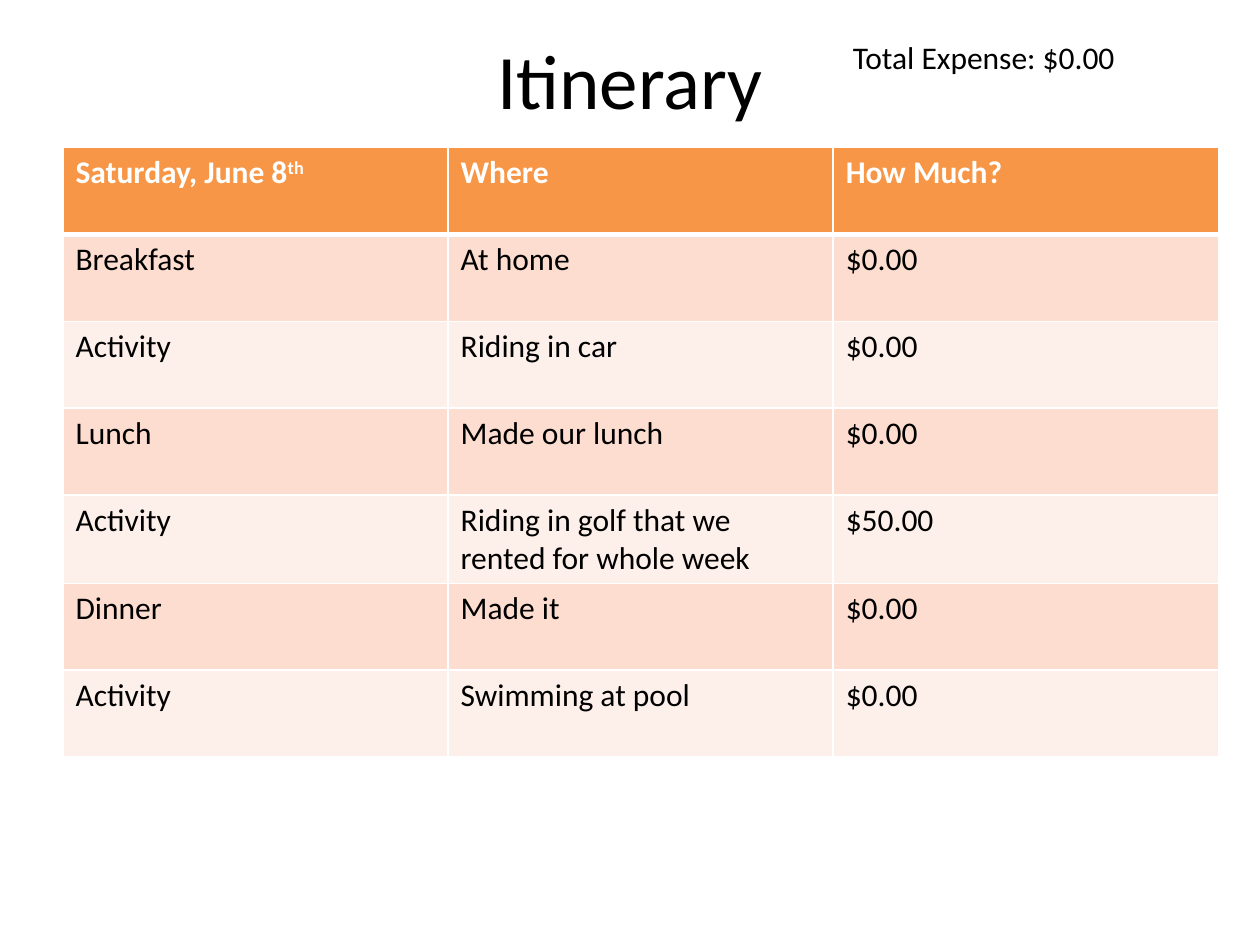
from lxml import etree
from pptx import Presentation
from pptx.dml.color import RGBColor
from pptx.enum.text import MSO_ANCHOR, PP_ALIGN
from pptx.oxml.ns import qn
from pptx.util import Inches, Pt

MIDDLE = MSO_ANCHOR.MIDDLE
TOP = MSO_ANCHOR.TOP
CENTER = PP_ALIGN.CENTER
LEFT = PP_ALIGN.LEFT

COLORS = {
    "ink": "000000",
    "white": "FFFFFF",
    "head": "F79646",
    "odd": "FCDDCF",
    "even": "FDEFE9",
}

TITLE = {"name": "Calibri", "size": Pt(44), "bold": False}
BODY = {"name": "Calibri", "size": Pt(18), "bold": False}
HEAD = {**BODY, "bold": True}

ROWS = [
    ("Saturday, June 8", "Where", "How Much?"),
    ("Breakfast", "At home", "$0.00"),
    ("Activity", "Riding in car", "$0.00"),
    ("Lunch", "Made our lunch", "$0.00"),
    ("Activity", "Riding in golf that we rented for whole week", "$50.00"),
    ("Dinner", "Made it", "$0.00"),
    ("Activity", "Swimming at pool", "$0.00"),
]


def rgb(key):
    return RGBColor.from_string(COLORS[key])


def add_run(para, text, style, color):
    run = para.add_run()
    run.text = text
    for name, value in style.items():
        setattr(run.font, name, value)
    run.font.color.rgb = rgb(color)
    return run


def add_text(slide, box, text, style, anchor=TOP, align=LEFT):
    frame = slide.shapes.add_textbox(*map(Inches, box)).text_frame
    frame.word_wrap = True
    frame.vertical_anchor = anchor
    para = frame.paragraphs[0]
    para.alignment = align
    add_run(para, text, style, "ink")


def add_edges(cell, base):
    props = cell._tc.get_or_add_tcPr()
    for side, width in {"L": 1, "R": 1, "T": 1, "B": base}.items():
        line = etree.SubElement(props, qn(f"a:ln{side}"), w=str(Pt(width)))
        fill = etree.SubElement(line, qn("a:solidFill"))
        etree.SubElement(fill, qn("a:srgbClr"), val=COLORS["white"])


def fill_cell(cell, text, row):
    add_edges(cell, 1 if row else 3)
    band = ("odd" if row % 2 else "even") if row else "head"
    cell.fill.solid()
    cell.fill.fore_color.rgb = rgb(band)
    style, color = (BODY, "ink") if row else (HEAD, "white")
    add_run(cell.text_frame.paragraphs[0], text, style, color)


def add_grid(slide, box, rows):
    frame = slide.shapes.add_table(len(rows), len(rows[0]), *map(Inches, box))
    table = frame.table
    for row, texts in enumerate(rows):
        for col, text in enumerate(texts):
            fill_cell(table.cell(row, col), text, row)
    return table


def add_suffix(cell, text):
    run = add_run(cell.text_frame.paragraphs[0], text, HEAD, "white")
    run._r.get_or_add_rPr().set("baseline", "30000")


def main():
    deck = Presentation()
    deck.slide_width, deck.slide_height = Inches(10), Inches(7.5)
    slide = deck.slides.add_slide(deck.slide_layouts[6])
    add_text(slide, (0.5, 0, 9, 1.25), "Itinerary", TITLE, MIDDLE, CENTER)
    add_text(slide, (6.67, 0.25, 3.08, 0.4), "Total Expense: $0.00", BODY)
    table = add_grid(slide, (0.5, 1.17, 9.17, 4.83), ROWS)
    add_suffix(table.cell(0, 0), "th")
    deck.save("out.pptx")


if __name__ == "__main__":
    main()
